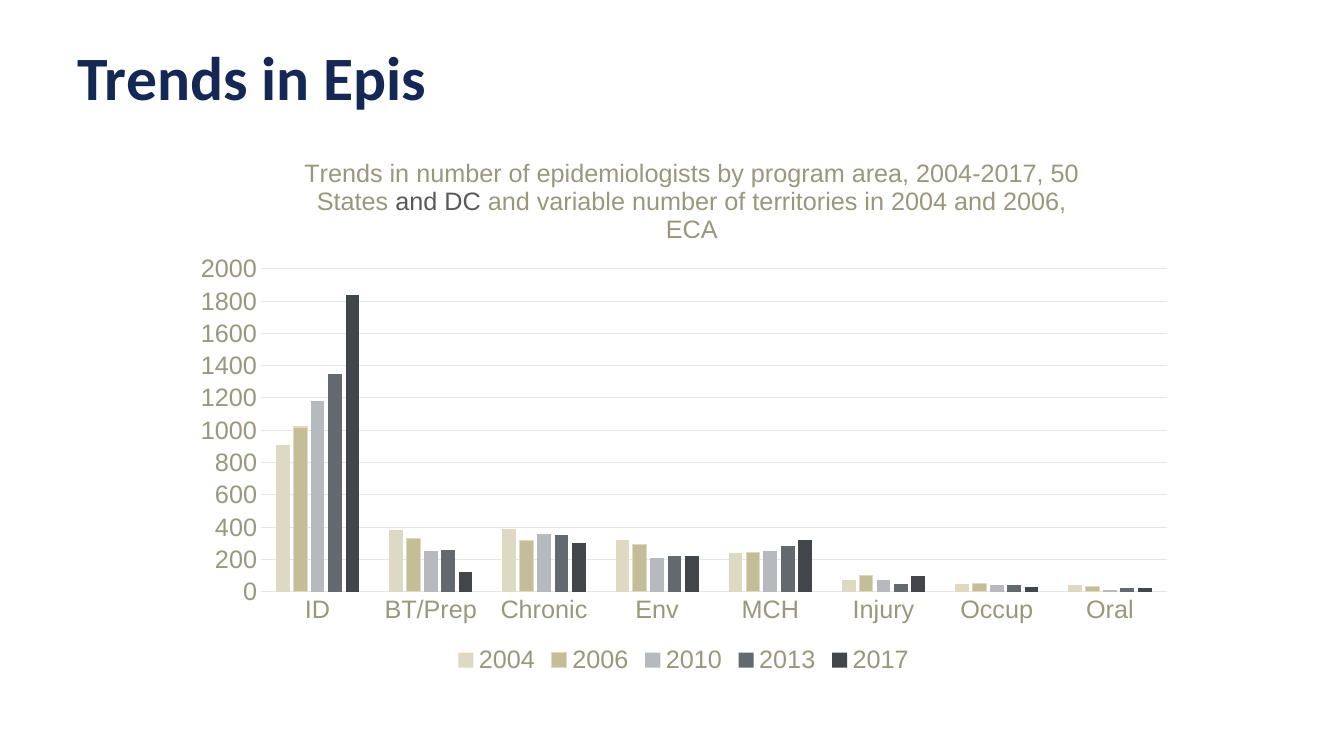
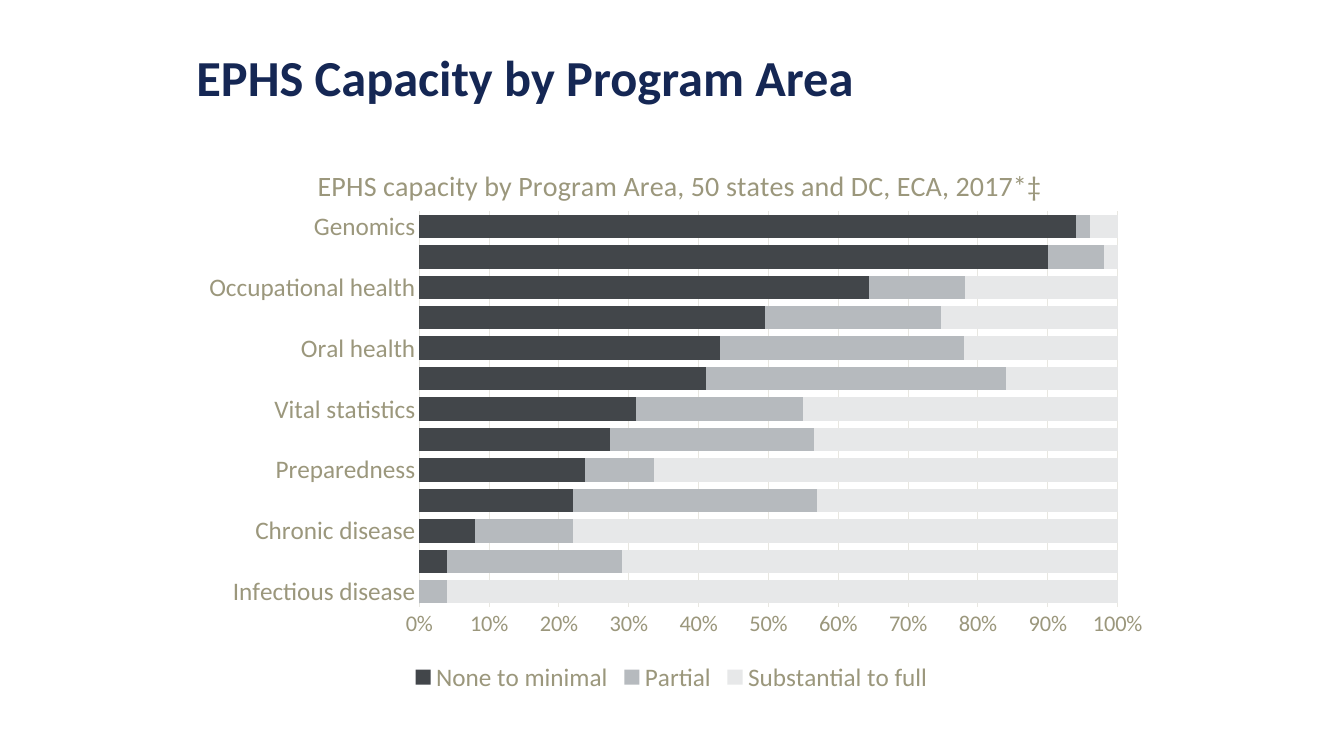
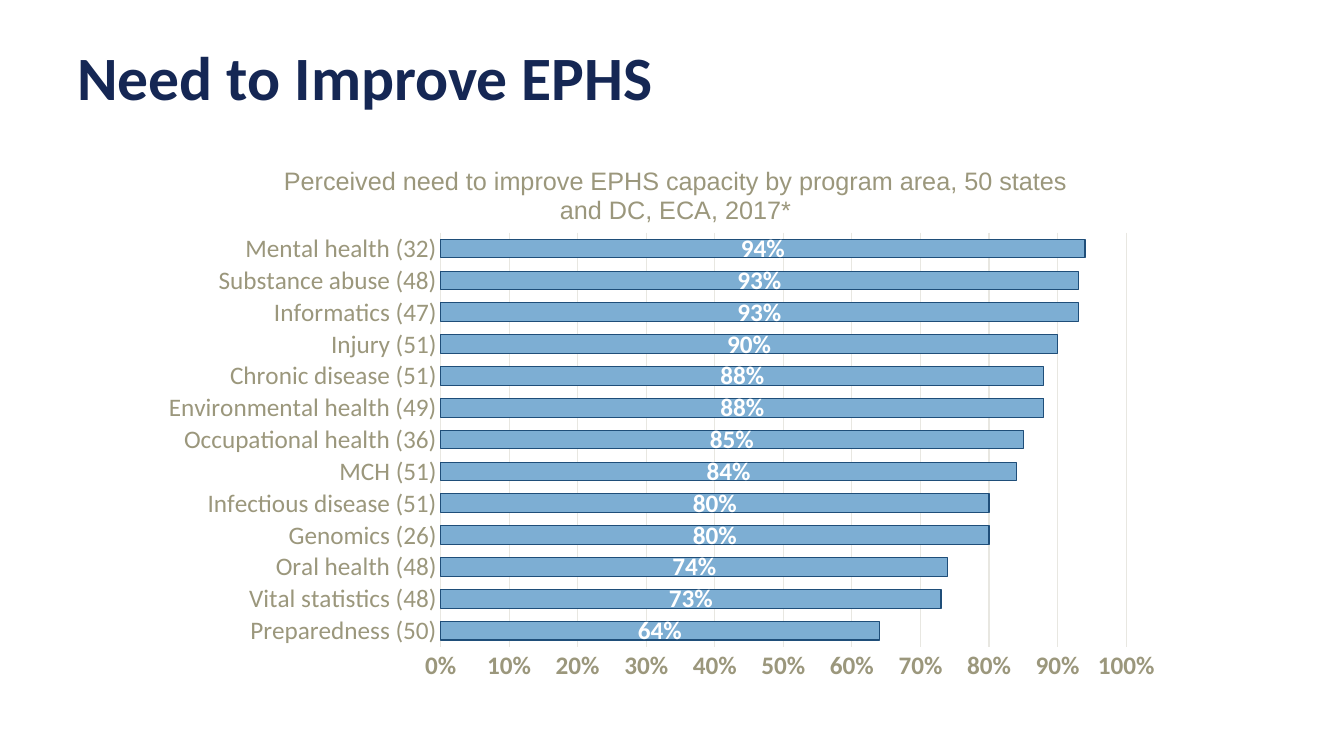
import pptx
import pptx.chart.data
import pptx.dml.color
import pptx.enum.chart
import pptx.enum.text
import pptx.oxml
import pptx.util
from pptx.util import Inches

NAVY, OLIVE, DARK, WHITE = "152754", "9B977C", "585543", "FFFFFF"
GREY, GRID, SAND = "595959", "E8E7E1", "DDD9C3"
CHARCOAL, SILVER, PALE = "42464A", "B6BABE", "E7E8E9"
TYPES = pptx.enum.chart.XL_CHART_TYPE
CHART_NS = "http://schemas.openxmlformats.org/drawingml/2006/chart"


def rgb(code):
    return pptx.dml.color.RGBColor.from_string(code)


def assign(target, **values):
    for name, value in values.items():
        setattr(target, name, value)


def style_font(font, size, color=OLIVE, name="Calibri", bold=False):
    assign(font, size=pptx.util.Pt(size), name=name, bold=bold)
    font.color.rgb = rgb(color)


def style_line(line, color):
    """Draw a thin line, or none when color is None."""
    if color is None:
        line.fill.background()
    else:
        line.color.rgb = rgb(color)
        line.width = pptx.util.Pt(0.75)


def set_layout(parent, inner=False, **fractions):
    """Pin a chart part to fractions (x, y, w, h) of the chart's box."""
    for old in parent.findall(f"{{{CHART_NS}}}layout"):
        parent.remove(old)
    target = '<c:layoutTarget val="inner"/>' if inner else ""
    modes = "".join(f'<c:{key}Mode val="edge"/>' for key in "xy")
    places = "".join(f'<c:{key} val="{value}"/>' for key, value in fractions.items())
    layout = pptx.oxml.parse_xml(
        f'<c:layout xmlns:c="{CHART_NS}"><c:manualLayout>{target}{modes}{places}'
        "</c:manualLayout></c:layout>")
    parent.insert(0 if inner else 1, layout)


def add_title(slide, text, left, width, size):
    box = slide.shapes.add_textbox(Inches(left), Inches(0.19), Inches(width), Inches(1.13))
    assign(box.text_frame, word_wrap=True,
           vertical_anchor=pptx.enum.text.MSO_ANCHOR.MIDDLE)
    span = box.text_frame.paragraphs[0].add_run()
    span.text = text
    style_font(span.font, size, NAVY, bold=True)


def add_chart(slide, box, kind, categories, series):
    """Add a chart; series holds (name, values, fill, outline)."""
    data = pptx.chart.data.CategoryChartData()
    data.categories = categories
    for name, values, _, _ in series:
        data.add_series(name, values)
    chart = slide.shapes.add_chart(kind, *map(Inches, box), data).chart
    style_font(chart.font, 10, DARK, "Arial")
    chart.has_legend = False
    plot = chart.plots[0]
    plot.vary_by_categories = False
    for bars, (_, _, fill, outline) in zip(plot.series, series):
        bars.format.fill.solid()
        bars.format.fill.fore_color.rgb = rgb(fill)
        bars.invert_if_negative = False
        style_line(bars.format.line, outline)
    return chart


def add_heading(chart, spans, place, size=18, name="Arial"):
    """Write the chart's own title from (text, color) spans."""
    title = chart.chart_title
    para = title.text_frame.paragraphs[0]
    for text, color in spans:
        span = para.add_run()
        span.text = text
        style_font(span.font, size, color, name)
    title.include_in_layout = False
    set_layout(title._element, x=place[0], y=place[1])


def style_axes(chart, top, step, number_format, plot_box, name="Calibri", size=18, bold=False):
    none = pptx.enum.chart.XL_TICK_MARK.NONE
    category, value = chart.category_axis, chart.value_axis
    for axis, line in ((category, GRID), (value, None)):
        assign(axis, major_tick_mark=none, minor_tick_mark=none)
        style_line(axis.format.line, line)
    style_font(category.tick_labels.font, 18, name=name)
    style_font(value.tick_labels.font, size, name=name, bold=bold)
    assign(value, minimum_scale=0, maximum_scale=top, major_unit=step,
           has_major_gridlines=True)
    style_line(value.major_gridlines.format.line, GRID)
    assign(value.tick_labels, number_format=number_format, number_format_is_linked=False)
    set_layout(chart._chartSpace.chart.plotArea, inner=True, **dict(zip("xywh", plot_box)))


def add_legend(chart, name):
    chart.has_legend = True
    assign(chart.legend, include_in_layout=False,
           position=pptx.enum.chart.XL_LEGEND_POSITION.BOTTOM)
    style_font(chart.legend.font, 18, name=name)


def trends_slide(slide):
    add_title(slide, "Trends in Epis", 0.67, 12, 44)
    chart = add_chart(
        slide, (1.79, 1.31, 9.98, 5.43), TYPES.COLUMN_CLUSTERED,
        ["ID", "BT/Prep", "Chronic", "Env", "MCH", "Injury", "Occup", "Oral"],
        [("2004", [910, 380, 390, 320, 240, 70, 50, 40], SAND, None),
         ("2006", [1020, 330, 320, 290, 240, 100, 50, 30], "C4BD97", SAND),
         ("2010", [1180, 250, 360, 210, 250, 70, 40, 10], SILVER, None),
         ("2013", [1350, 260, 350, 220, 280, 50, 40, 20], "63696F", None),
         ("2017", [1840, 120, 300, 220, 320, 100, 30, 20], CHARCOAL, None)])
    assign(chart.plots[0], gap_width=219, overlap=-27)
    add_heading(chart, [
        ("Trends in number of epidemiologists by program area, 2004-2017, 50 States ", OLIVE),
        ("and DC", GREY),
        (" and variable number of territories in 2004 and 2006, ECA", OLIVE)], (0.12, 0.04))
    style_axes(chart, 2000, 200, "0", (0.08, 0.25, 0.9, 0.59), "Arial")
    add_legend(chart, "Arial")


def capacity_slide(slide):
    add_title(slide, "EPHS Capacity by Program Area", 1.85, 9, 36)
    chart = add_chart(
        slide, (1.85, 1.31, 9.62, 5.61), TYPES.BAR_STACKED_100,
        ["Infectious disease", "MCH", "Chronic disease", "Environmental health",
         "Preparedness", "Injury", "Vital statistics", "Substance abuse", "Oral health",
         "Informatics", "Occupational health", "Mental health", "Genomics"],
        [("None to minimal", [0, 4, 8, 22, 24, 27, 31, 41, 43, 49, 65, 90, 94],
          CHARCOAL, None),
         ("Partial", [4, 25, 14, 35, 10, 29, 24, 43, 35, 25, 14, 8, 2], SILVER, None),
         ("Substantial to full", [96, 71, 78, 43, 67, 43, 45, 16, 22, 25, 22, 2, 4],
          PALE, None)])
    assign(chart.plots[0], gap_width=30, overlap=100)
    add_heading(chart, [("EPHS capacity by Program Area, 50 states and DC, ECA, 2017*‡", OLIVE)],
                (0.13, 0.05), 20, "Calibri")
    style_axes(chart, 1, 0.1, "0%", (0.24, 0.14, 0.72, 0.7), size=16)
    add_legend(chart, "Calibri")


def need_slide(slide):
    add_title(slide, "Need to Improve EPHS", 0.67, 12, 44)
    chart = add_chart(
        slide, (1.67, 1.31, 10, 5.55), TYPES.BAR_STACKED,
        ["Preparedness (50)", "Vital statistics (48)", "Oral health (48)", "Genomics (26)",
         "Infectious disease (51)", "MCH (51)", "Occupational health (36)",
         "Environmental health (49)", "Chronic disease (51)", "Injury (51)",
         "Informatics (47)", "Substance abuse (48)", "Mental health (32)"],
        [("Series 1", [0.64, 0.73, 0.74, 0.8, 0.8, 0.84, 0.85, 0.88, 0.88, 0.9, 0.93,
                       0.93, 0.94], "7DAED3", "1F4E79")])
    plot = chart.plots[0]
    assign(plot, gap_width=70, overlap=100, has_data_labels=True)
    assign(plot.data_labels, show_value=True, number_format="0%",
           number_format_is_linked=False,
           position=pptx.enum.chart.XL_LABEL_POSITION.CENTER)
    style_font(plot.data_labels.font, 18, WHITE, bold=True)
    add_heading(chart, [("Perceived need to improve EPHS capacity by program area, "
                         "50 states and DC, ECA, 2017*", OLIVE)], (0.11, 0.05))
    style_axes(chart, 1, 0.1, "0%", (0.27, 0.18, 0.68, 0.74), bold=True)


def main():
    deck = pptx.Presentation()
    assign(deck, slide_width=Inches(13.33), slide_height=Inches(7.5))
    for build in (trends_slide, capacity_slide, need_slide):
        build(deck.slides.add_slide(deck.slide_layouts[6]))
    deck.save("out.pptx")


if __name__ == "__main__":
    main()
